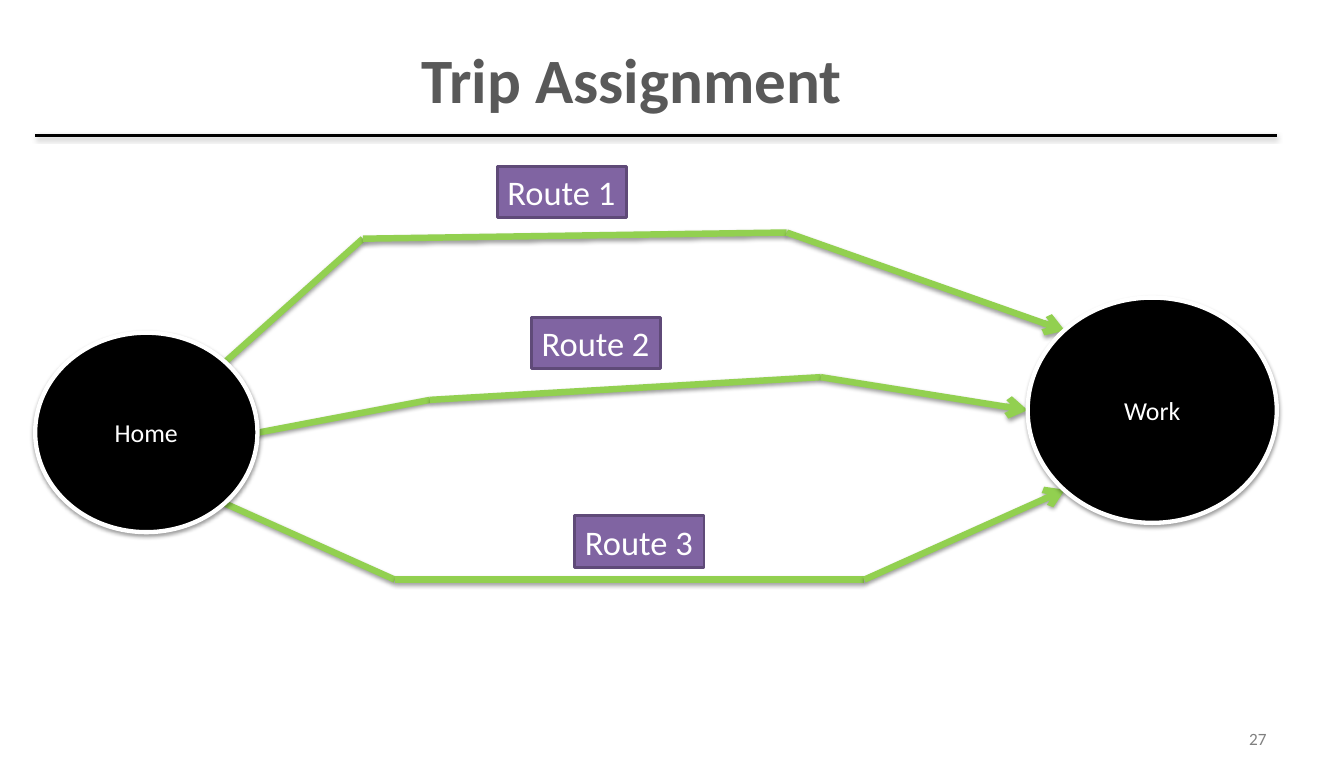
from lxml import etree
from pptx import Presentation
from pptx.dml.color import RGBColor
from pptx.enum.shapes import MSO_CONNECTOR, MSO_SHAPE
from pptx.enum.text import MSO_ANCHOR, MSO_AUTO_SIZE, PP_ALIGN
from pptx.oxml import parse_xml
from pptx.oxml.ns import nsdecls, qn
from pptx.util import Inches, Pt

BLACK = RGBColor(0x00, 0x00, 0x00)
WHITE = RGBColor(0xFF, 0xFF, 0xFF)
DARK_GRAY = RGBColor(0x59, 0x59, 0x59)
GRAY = RGBColor(0x80, 0x80, 0x80)
GREEN = RGBColor(0x92, 0xD0, 0x50)
PURPLE = RGBColor(0x80, 0x64, 0xA2)
DARK_PURPLE = RGBColor(0x5F, 0x4A, 0x78)

SHADOW = (
    f'<a:effectLst {nsdecls("a")}>'
    '<a:outerShdw blurRad="39370" dist="20320" dir="5400000" rotWithShape="0">'
    '<a:srgbClr val="000000"><a:alpha val="38000"/></a:srgbClr>'
    '</a:outerShdw></a:effectLst>'
)


def add_text(s, text, box, shape=None, size=18, color=WHITE, bold=False,
             align=PP_ALIGN.CENTER, anchor=MSO_ANCHOR.MIDDLE, fill=None,
             line=None, width=2, shadow=False, wrap=True):
    """Add text in a box (left, top, width, height), with an outline shape if given."""
    box = [Inches(v) for v in box]
    if shape is None:
        sp = s.shapes.add_textbox(*box)
    else:
        sp = s.shapes.add_shape(shape, *box)
        sp.fill.solid()
        sp.fill.fore_color.rgb = fill
        sp.line.color.rgb = line
        sp.line.width = Pt(width)
        if shadow:
            sp._element.spPr.append(parse_xml(SHADOW))
        else:
            sp.shadow.inherit = False
    tf = sp.text_frame
    tf.word_wrap = wrap
    tf.vertical_anchor = anchor
    p = tf.paragraphs[0]
    p.alignment = align
    r = p.add_run()
    r.text = text
    r.font.name = "Calibri"
    r.font.size = Pt(size)
    r.font.bold = bold
    r.font.color.rgb = color
    return sp


def add_line(s, start, end, color, width, arrow=False):
    x1, y1, x2, y2 = [Inches(v) for v in (*start, *end)]
    c = s.shapes.add_connector(MSO_CONNECTOR.STRAIGHT, x1, y1, x2, y2)
    c.line.color.rgb = color
    c.line.width = Pt(width)
    if arrow:
        etree.SubElement(c.line._get_or_add_ln(), qn("a:tailEnd"), type="arrow")
    c._element.spPr.append(parse_xml(SHADOW))


prs = Presentation()
prs.slide_width = Inches(13)
prs.slide_height = Inches(7.5)
s = prs.slides.add_slide(prs.slide_layouts[6])

add_text(s, "27", (9.32, 6.95, 3.03, 0.4), size=12, color=GRAY, align=PP_ALIGN.RIGHT)
add_text(s, "Trip Assignment", (1.8, 0.34, 8.62, 1.16), size=44, color=DARK_GRAY,
         bold=True, anchor=MSO_ANCHOR.TOP)
add_line(s, (0.34, 1.31), (12.35, 1.31), BLACK, 2)

# Each route: label, label position, then the points from home to work
routes = [
    ("Route 1", (4.81, 1.61), [(2.17, 3.51), (3.51, 2.31), (7.61, 2.25), (10.3, 3.2)]),
    ("Route 2", (5.14, 3.07), [(2.48, 4.19), (4.16, 3.87), (7.94, 3.65), (9.94, 3.97)]),
    ("Route 3", (5.56, 4.99), [(2.17, 4.87), (3.82, 5.61), (8.36, 5.61), (10.3, 4.74)]),
]
for label, position, points in routes:
    for start, end in zip(points, points[1:]):
        add_line(s, start, end, GREEN, 4.5, arrow=end == points[-1])
    sp = add_text(s, label, (*position, 1.25, 0.5), MSO_SHAPE.RECTANGLE, size=24,
                  align=PP_ALIGN.LEFT, anchor=MSO_ANCHOR.TOP, fill=PURPLE,
                  line=DARK_PURPLE, wrap=False)
    sp.text_frame.auto_size = MSO_AUTO_SIZE.SHAPE_TO_FIT_TEXT

for place, box in [("Home", (0.34, 3.22, 2.15, 1.93)), ("Work", (9.94, 2.88, 2.41, 2.18))]:
    add_text(s, place, box, MSO_SHAPE.OVAL, fill=BLACK, line=WHITE, width=3, shadow=True)

prs.save("out.pptx")
